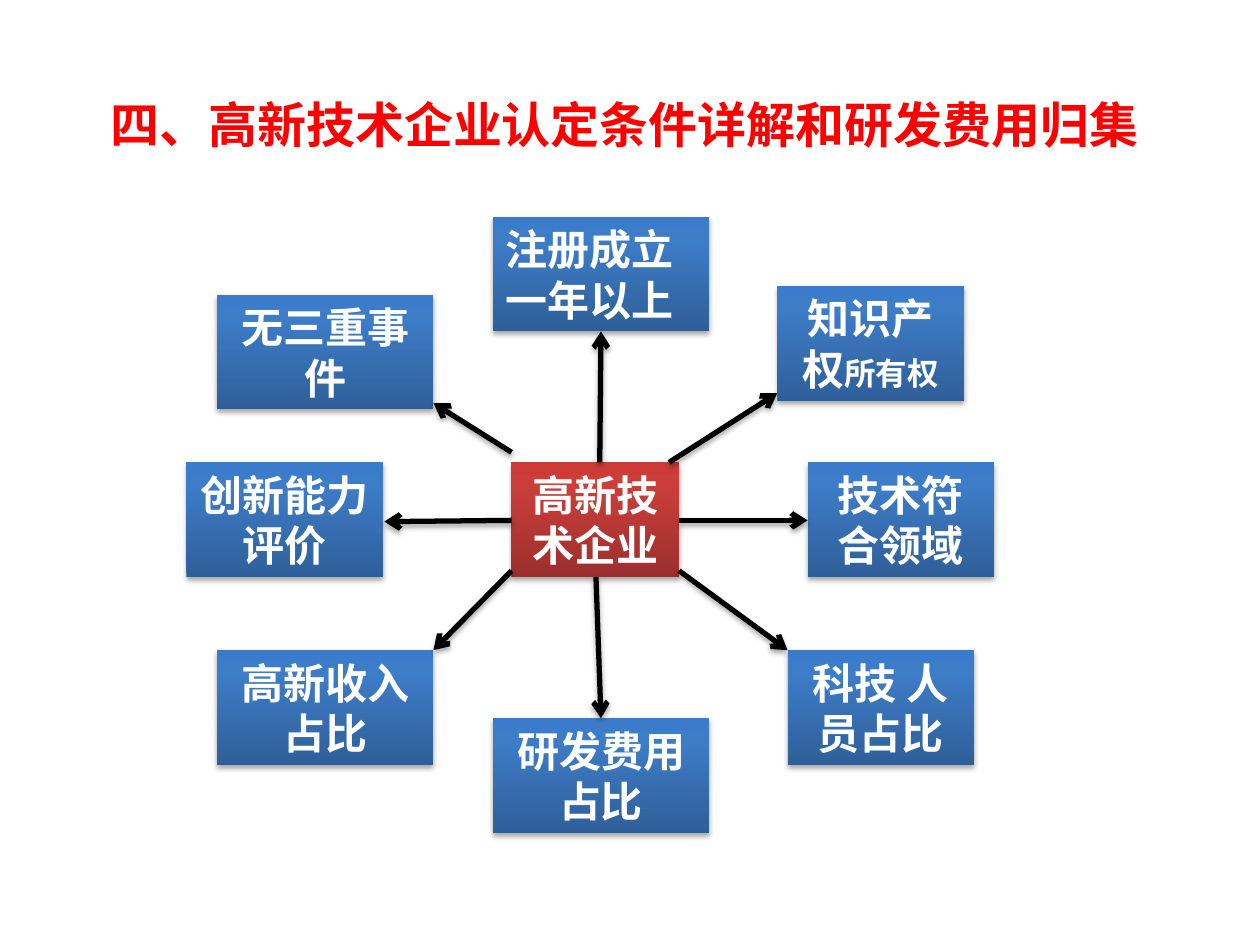
from copy import deepcopy

from lxml.etree import SubElement
from pptx import Presentation
from pptx.dml.color import RGBColor
from pptx.enum.shapes import MSO_CONNECTOR, MSO_SHAPE
from pptx.enum.text import MSO_ANCHOR, MSO_AUTO_SIZE, PP_ALIGN
from pptx.oxml import parse_xml
from pptx.oxml.ns import nsdecls, qn
from pptx.util import Inches, Pt

COLORS = {"title": "FF0000", "text": "FFFFFF", "arrow": "000000"}
# Gradient stops run from the bottom of a box to its top.
GRADIENTS = {
    "core": ["9C2F2D", "CB3E3A", "CE3B37"],
    "condition": ["2F5F99", "3D7CC7", "3A7CCB"],
}
STOP_POSITIONS = [0, 0.8, 1]
BOX_HEIGHT = 0.91

# Text runs with sizes, left, top, width, alignment
CONDITIONS = [
    ([("注册成立一年以上", 24)], 3.91, 1.72, 1.72, PP_ALIGN.LEFT),
    ([("知识产权", 24), ("所有权", 18)], 6.17, 2.27, 1.48, PP_ALIGN.CENTER),
    ([("技术符合领域", 24)], 6.41, 3.67, 1.48, PP_ALIGN.CENTER),
    ([("科技 人员占比", 24)], 6.25, 5.16, 1.48, PP_ALIGN.CENTER),
    ([("研发费用占比", 24)], 3.91, 5.7, 1.72, PP_ALIGN.CENTER),
    ([("高新收入占比", 24)], 1.72, 5.16, 1.72, PP_ALIGN.CENTER),
    ([("创新能力评价", 24)], 1.48, 3.67, 1.56, PP_ALIGN.CENTER),
    ([("无三重事件", 24)], 1.72, 2.34, 1.72, PP_ALIGN.CENTER),
]

# Start and end of each arrow, clockwise from the top
ARROWS = [
    ((4.76, 3.67), (4.77, 2.63)),
    ((5.31, 3.67), (6.17, 3.12)),
    ((5.39, 4.13), (6.41, 4.13)),
    ((5.39, 4.53), (6.25, 5.16)),
    ((4.73, 4.58), (4.77, 5.7)),
    ((4.06, 4.53), (3.44, 5.16)),
    ((4.06, 4.13), (3.05, 4.14)),
    ((4.06, 3.59), (3.44, 3.2)),
]


class DiagramSlide:
    title_font = "Noto Sans CJK JP"
    box_font = "Calibri"

    def __init__(self, slide):
        self.slide = slide

    def add_shadow(self, shape):
        """Give a soft shadow below; call after fill and line are set."""
        shape._element.spPr.append(parse_xml(
            f'<a:effectLst {nsdecls("a")}>'
            f'<a:outerShdw blurRad="{Pt(3.1)}" dist="{Pt(1.8)}" dir="5400000" rotWithShape="0">'
            '<a:srgbClr val="000000"><a:alpha val="35000"/></a:srgbClr>'
            '</a:outerShdw></a:effectLst>'))

    def set_title(self, text, left, top, width, height):
        title = self.slide.shapes.title
        title.left, title.top = Inches(left), Inches(top)
        title.width, title.height = Inches(width), Inches(height)
        frame = title.text_frame
        frame.text = text
        frame.word_wrap = True
        frame.auto_size = MSO_AUTO_SIZE.SHAPE_TO_FIT_TEXT
        paragraph = frame.paragraphs[0]
        paragraph.alignment = PP_ALIGN.CENTER
        font = paragraph.runs[0].font
        font.size, font.bold, font.name = Pt(28), True, self.title_font
        font.color.rgb = RGBColor.from_string(COLORS["title"])
        SubElement(font._element, qn("a:ea"), typeface=self.title_font)

    def fill_gradient(self, shape, colors):
        shape.fill.gradient()
        shape.fill.gradient_angle = 90
        stop_list = shape._element.spPr.find(".//" + qn("a:gsLst"))
        stop_list.insert(1, deepcopy(stop_list[0]))
        for stop, position, color in zip(shape.fill.gradient_stops, STOP_POSITIONS, colors):
            stop.position = position
            stop.color.rgb = RGBColor.from_string(color)

    def add_box(self, runs, left, top, width, alignment, role="condition"):
        box = self.slide.shapes.add_shape(
            MSO_SHAPE.RECTANGLE, Inches(left), Inches(top), Inches(width), Inches(BOX_HEIGHT))
        self.fill_gradient(box, GRADIENTS[role])
        box.line.fill.background()
        self.add_shadow(box)
        frame = box.text_frame
        frame.word_wrap = True
        frame.auto_size = MSO_AUTO_SIZE.SHAPE_TO_FIT_TEXT
        frame.vertical_anchor = MSO_ANCHOR.MIDDLE
        paragraph = frame.paragraphs[0]
        paragraph.alignment = alignment
        paragraph.font.name, paragraph.font.bold = self.box_font, True
        paragraph.font.color.rgb = RGBColor.from_string(COLORS["text"])
        for text, size in runs:
            run = paragraph.add_run()
            run.text = text
            run.font.size = Pt(size)

    def add_arrow(self, start, end):
        arrow = self.slide.shapes.add_connector(
            MSO_CONNECTOR.STRAIGHT, *(Inches(value) for value in start + end))
        arrow.line.width = Pt(3)
        arrow.line.color.rgb = RGBColor.from_string(COLORS["arrow"])
        SubElement(arrow.line._get_or_add_ln(), qn("a:tailEnd"), type="arrow")
        self.add_shadow(arrow)


def main():
    presentation = Presentation()
    presentation.slide_width, presentation.slide_height = Inches(10), Inches(7.5)
    title_only = presentation.slide_layouts[5]
    diagram = DiagramSlide(presentation.slides.add_slide(title_only))

    diagram.set_title("四、高新技术企业认定条件详解和研发费用归集", 0.62, 0.7, 8.67, 0.57)
    diagram.add_box([("高新技术企业", 24)], 4.06, 3.67, 1.33, PP_ALIGN.CENTER, "core")
    for condition in CONDITIONS:
        diagram.add_box(*condition)
    for start, end in ARROWS:
        diagram.add_arrow(start, end)

    presentation.save("out.pptx")


if __name__ == "__main__":
    main()
